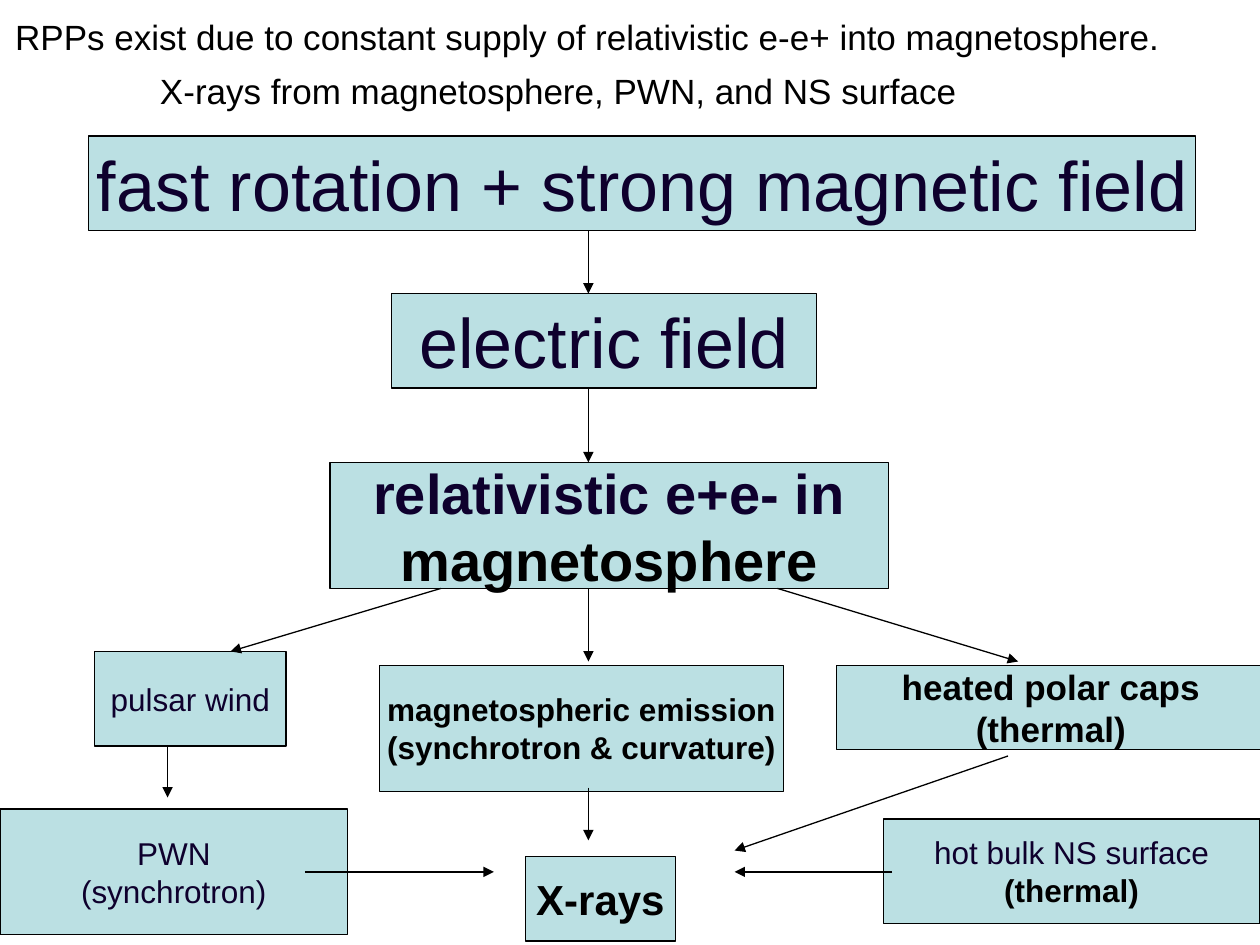
"""Build a flow chart of how rotation-powered pulsars produce X-rays."""
from dataclasses import dataclass

import pptx
import pptx.dml.color
import pptx.enum.shapes
import pptx.enum.text
import pptx.oxml
import pptx.oxml.ns
import pptx.util
from pptx.util import Inches


@dataclass(frozen=True)
class Theme:
    font: str = "Arial"
    black: str = "000000"
    navy: str = "0E002D"
    box_fill: str = "BBE0E3"
    line_width: float = 0.75
    inset: float = 0.04
    small: int = 18
    heading: int = 20
    result: int = 24
    key: int = 32
    cause: int = 40


THEME = Theme()


@dataclass(frozen=True)
class Line:
    text: str
    size: int
    color: str = THEME.black
    bold: bool = False


@dataclass(frozen=True)
class Stage:
    left: float
    top: float
    width: float
    height: float
    lines: tuple[Line, ...]
    wrap: bool = False


@dataclass(frozen=True)
class Flow:
    start: tuple[float, float]
    end: tuple[float, float]


AXIS = 4.67
XRAY_LEVEL = 6.92

STAGES = (
    Stage(0.75, 5.17, 1.52, 0.75, (Line("pulsar wind", THEME.small, THEME.navy),)),
    Stage(3.01, 5.28, 3.21, 1, (
        Line("magnetospheric emission", THEME.small, bold=True),
        Line("(synchrotron & curvature)", THEME.small, bold=True))),
    Stage(6.64, 5.28, 3.4, 0.67, (
        Line("heated polar caps", THEME.heading, bold=True),
        Line("(thermal)", THEME.heading, bold=True)), wrap=True),
    Stage(2.62, 3.67, 4.43, 1, (
        Line("relativistic e+e- in", THEME.key, THEME.navy, True),
        Line("magnetosphere", THEME.key, bold=True))),
    Stage(0.7, 1.08, 8.79, 0.75, (
        Line("fast rotation + strong magnetic field", THEME.cause, THEME.navy),)),
    Stage(3.11, 2.33, 3.37, 0.75, (Line("electric field", THEME.cause, THEME.navy),)),
    Stage(0, 6.42, 2.76, 1, (
        Line("PWN", THEME.small, THEME.navy),
        Line("(synchrotron)", THEME.small, THEME.navy)), wrap=True),
    Stage(4.17, 6.8, 1.19, 0.67, (Line("X-rays", THEME.result, bold=True),)),
    Stage(7.01, 6.5, 2.99, 0.83, (
        Line("hot bulk NS surface", THEME.small, THEME.navy),
        Line("(thermal)", THEME.small, bold=True)), wrap=True),
)

FLOWS = (
    Flow((AXIS, 1.83), (AXIS, 2.33)),
    Flow((AXIS, 3.08), (AXIS, 3.67)),
    Flow((3.5, 4.67), (1.83, 5.17)),
    Flow((AXIS, 4.67), (AXIS, 5.25)),
    Flow((6.17, 4.67), (8.08, 5.25)),
    Flow((1.33, 5.92), (1.33, 6.33)),
    Flow((2.42, XRAY_LEVEL), (3.92, XRAY_LEVEL)),
    Flow((AXIS, 6.25), (AXIS, 6.67)),
    Flow((8, 6), (5.83, 6.75)),
    Flow((7.08, XRAY_LEVEL), (5.83, XRAY_LEVEL)),
)


def rgb(color: str) -> pptx.dml.color.RGBColor:
    """Turn a hex string into a colour."""
    return pptx.dml.color.RGBColor.from_string(color)


def write(frame, lines: tuple[Line, ...], align, anchor, wrap: bool = False) -> None:
    """Fill a text frame with one paragraph per line."""
    frame.word_wrap = wrap
    frame.vertical_anchor = anchor
    frame.margin_left = frame.margin_right = Inches(THEME.inset)
    frame.margin_top = frame.margin_bottom = Inches(THEME.inset)
    for index, line in enumerate(lines):
        paragraph = frame.add_paragraph() if index else frame.paragraphs[0]
        paragraph.alignment = align
        run = paragraph.add_run()
        run.text = line.text
        run.font.name = THEME.font
        run.font.size = pptx.util.Pt(line.size)
        run.font.bold = line.bold
        run.font.color.rgb = rgb(line.color)


def write_heading(frame, text: str) -> None:
    """Write a left-aligned heading line."""
    write(frame, (Line(text, THEME.heading),),
          pptx.enum.text.PP_ALIGN.LEFT, pptx.enum.text.MSO_ANCHOR.TOP)
    frame.auto_size = pptx.enum.text.MSO_AUTO_SIZE.SHAPE_TO_FIT_TEXT


def draw_stage(shapes, stage: Stage) -> None:
    """Draw one box of the flow chart."""
    box = shapes.add_shape(
        pptx.enum.shapes.MSO_SHAPE.RECTANGLE, Inches(stage.left), Inches(stage.top),
        Inches(stage.width), Inches(stage.height))
    box.shadow.inherit = False
    box.fill.solid()
    box.fill.fore_color.rgb = rgb(THEME.box_fill)
    box.line.color.rgb = rgb(THEME.black)
    box.line.width = pptx.util.Pt(THEME.line_width)
    write(box.text_frame, stage.lines, pptx.enum.text.PP_ALIGN.CENTER,
          pptx.enum.text.MSO_ANCHOR.MIDDLE, stage.wrap)


def draw_flow(shapes, flow: Flow) -> None:
    """Draw one arrow between stages."""
    arrow = shapes.add_connector(
        pptx.enum.shapes.MSO_CONNECTOR.STRAIGHT,
        *(Inches(value) for value in flow.start + flow.end))
    arrow.line.color.rgb = rgb(THEME.black)
    arrow.line.width = pptx.util.Pt(THEME.line_width)
    head = pptx.oxml.parse_xml(
        f'<a:tailEnd {pptx.oxml.ns.nsdecls("a")} type="triangle"/>')
    arrow.line._get_or_add_ln().append(head)
    arrow._element.spPr.append(
        pptx.oxml.parse_xml(f'<a:effectLst {pptx.oxml.ns.nsdecls("a")}/>'))


def main() -> None:
    """Assemble and save the slide."""
    deck = pptx.Presentation()
    deck.slide_width, deck.slide_height = Inches(10), Inches(7.5)
    slide = deck.slides.add_slide(deck.slide_layouts[5])
    title = slide.shapes.title
    title.left, title.top = Inches(0.08), Inches(0.08)
    title.width, title.height = Inches(9.89), Inches(0.39)
    write_heading(
        title.text_frame,
        "RPPs exist due to constant supply of relativistic e-e+ into magnetosphere.")
    for stage in STAGES:
        draw_stage(slide.shapes, stage)
    for flow in FLOWS:
        draw_flow(slide.shapes, flow)
    subtitle = slide.shapes.add_textbox(
        Inches(1.23), Inches(0.51), Inches(6.77), Inches(0.39))
    write_heading(subtitle.text_frame, "X-rays from magnetosphere, PWN, and NS surface")
    deck.save("out.pptx")


if __name__ == "__main__":
    main()
